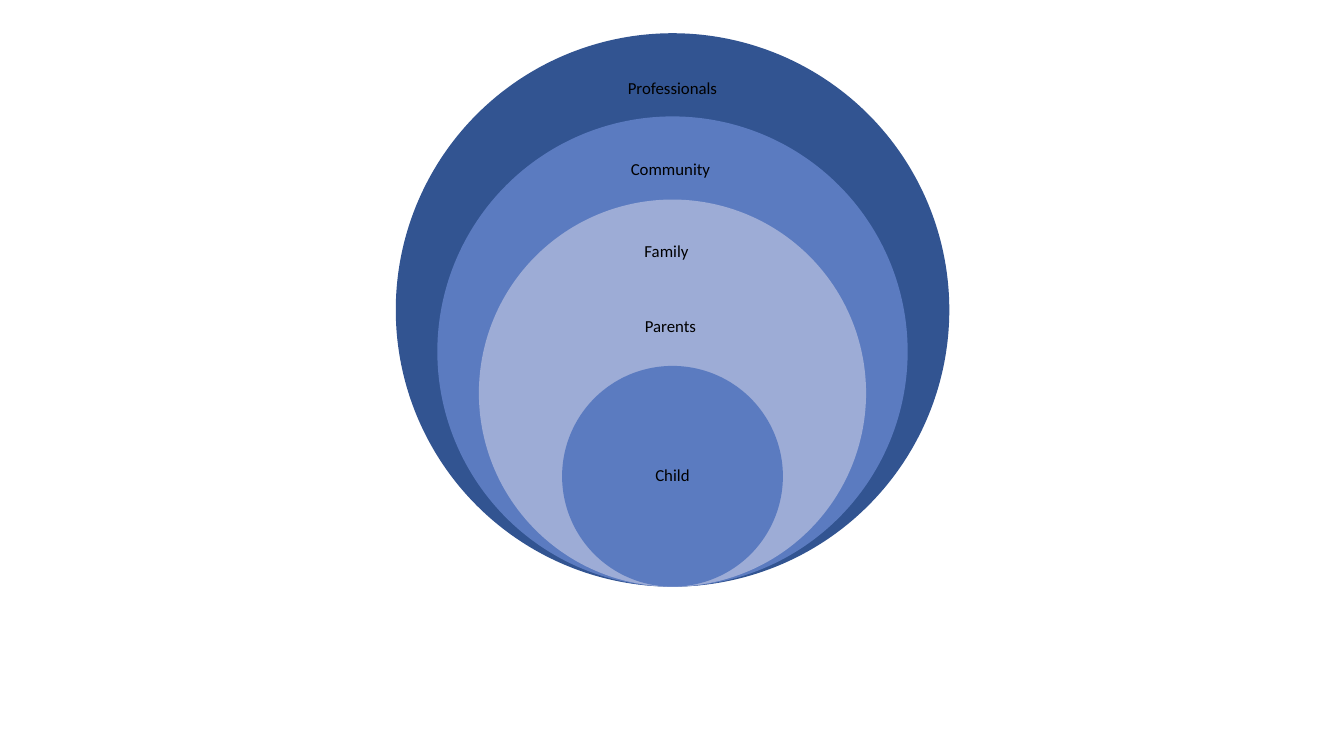
from dataclasses import dataclass

from pptx import Presentation
from pptx.dml.color import RGBColor
from pptx.enum.shapes import MSO_SHAPE
from pptx.enum.text import MSO_ANCHOR, PP_ALIGN
from pptx.slide import Slide
from pptx.util import Inches, Pt

CENTER_X = 6.67
RINGS_BOTTOM = 5.82
OUTER_DIAMETER = 5.49
DIAMETER_STEP = 0.825
INSET = 0.09


@dataclass(frozen=True)
class Ring:
    label: str
    fill: str
    label_top: float
    label_width: float
    label_height: float
    right_inset: float = INSET
    bottom_inset: float = INSET


RINGS = [
    Ring("Professionals", "325491", 0.61, 2.06, 0.55),
    Ring("Community", "5B7BC0", 1.42, 2.01, 0.54, right_inset=0.13),
    Ring("Family", "9DACD6", 2.24, 1.99, 0.53, right_inset=0.21),
    Ring("Parents", "9DACD6", 3.07, 1.63, 0.54, right_inset=0.13, bottom_inset=0.29),
    Ring("Child", "5B7BC0", 4.17, 1.55, 1.1),
]


def color(value: str) -> RGBColor:
    return RGBColor.from_string(value)


def draw_circle(slide: Slide, ring: Ring, diameter: float) -> None:
    circle = slide.shapes.add_shape(
        MSO_SHAPE.OVAL,
        Inches(CENTER_X - diameter / 2),
        Inches(RINGS_BOTTOM - diameter),
        Inches(diameter),
        Inches(diameter),
    )
    circle.shadow.inherit = False
    circle.fill.solid()
    circle.fill.fore_color.rgb = color(ring.fill)
    circle.line.fill.background()


def draw_label(slide: Slide, ring: Ring) -> None:
    label = slide.shapes.add_textbox(
        Inches(CENTER_X - ring.label_width / 2),
        Inches(ring.label_top),
        Inches(ring.label_width),
        Inches(ring.label_height),
    )
    frame = label.text_frame
    frame.word_wrap = True
    frame.vertical_anchor = MSO_ANCHOR.MIDDLE
    frame.margin_left = frame.margin_top = Inches(INSET)
    frame.margin_right = Inches(ring.right_inset)
    frame.margin_bottom = Inches(ring.bottom_inset)
    paragraph = frame.paragraphs[0]
    paragraph.alignment = PP_ALIGN.CENTER
    paragraph.line_spacing = 0.9
    run = paragraph.add_run()
    run.text = ring.label
    run.font.name = "Calibri"
    run.font.size = Pt(12)
    run.font.color.rgb = color("000000")


def main() -> None:
    presentation = Presentation()
    presentation.slide_width = Inches(13.33)
    presentation.slide_height = Inches(7.5)
    slide = presentation.slides.add_slide(presentation.slide_layouts[6])
    for level, ring in enumerate(RINGS):
        draw_circle(slide, ring, OUTER_DIAMETER - level * DIAMETER_STEP)
        draw_label(slide, ring)
    presentation.save("out.pptx")


if __name__ == "__main__":
    main()
